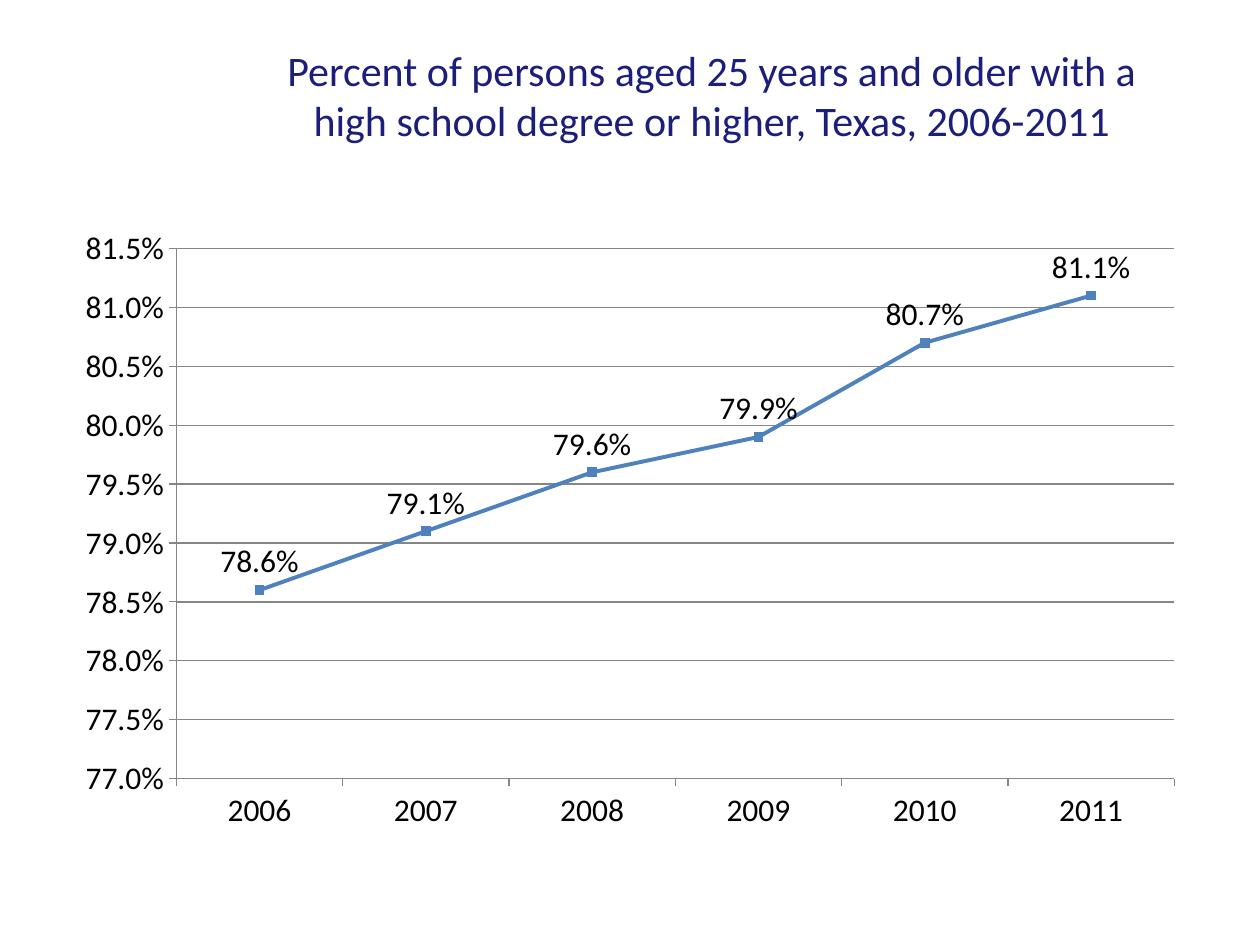
from pptx import Presentation
from pptx.chart.data import CategoryChartData
from pptx.dml.color import RGBColor
from pptx.enum.chart import XL_CHART_TYPE, XL_LABEL_POSITION, XL_MARKER_STYLE, XL_TICK_MARK
from pptx.enum.text import MSO_ANCHOR, MSO_AUTO_SIZE, PP_ALIGN
from pptx.oxml import parse_xml
from pptx.oxml.ns import nsdecls
from pptx.util import Inches, Pt

WIDTH, HEIGHT = Inches(10), Inches(7.5)
TITLE = ("Percent of persons aged 25 years and older with a high school "
         "degree or higher, Texas, 2006-2011")
TITLE_BOX = (0.19, 0.03, 0.75, 0.14)
CHART_BOX = (0.05, 0.23, 0.9, 0.66)
PLOT_SHARES = {"x": 0.1, "y": 0.05, "w": 0.88, "h": 0.85}
RATES = {"2006": 0.786, "2007": 0.791, "2008": 0.796,
         "2009": 0.799, "2010": 0.807, "2011": 0.811}


def color(value):
    return RGBColor.from_string(value)


def apply(target, formats):
    for name, value in formats.items():
        setattr(target, name, value)


def place(box):
    return [int(share * side) for share, side in zip(box, (WIDTH, HEIGHT) * 2)]


def set_font(font, size, shade):
    apply(font, {"name": "Calibri", "size": Pt(size), "bold": False})
    font.color.rgb = color(shade)


def set_line(line, width, shade):
    line.width = Pt(width)
    line.color.rgb = color(shade)


def add_title(page, box):
    title = page.shapes.title
    apply(title, dict(zip(("left", "top", "width", "height"), place(box))))
    frame = title.text_frame
    frame.text = TITLE
    apply(frame, {"word_wrap": True, "auto_size": MSO_AUTO_SIZE.NONE,
                  "vertical_anchor": MSO_ANCHOR.MIDDLE})
    para = frame.paragraphs[0]
    para.alignment = PP_ALIGN.CENTER
    set_font(para.runs[0].font, 24, "1B1E7A")


def fix_plot(chart):
    sides = "".join(f'<c:{side}Mode val="edge"/>' for side in "xy")
    shares = "".join(f'<c:{key} val="{share}"/>' for key, share in PLOT_SHARES.items())
    layout = parse_xml(
        f'<c:layout {nsdecls("c")}><c:manualLayout><c:layoutTarget val="inner"/>'
        f"{sides}{shares}</c:manualLayout></c:layout>")
    plot_area = chart._chartSpace.chart.plotArea
    for old in plot_area.findall(layout.tag):
        plot_area.remove(old)
    plot_area.insert(0, layout)


def format_axes(chart):
    for axis in (chart.category_axis, chart.value_axis):
        apply(axis, {"major_tick_mark": XL_TICK_MARK.OUTSIDE,
                     "minor_tick_mark": XL_TICK_MARK.NONE})
        set_line(axis.format.line, 0.75, "868686")
    chart.category_axis.has_major_gridlines = False
    values = chart.value_axis
    apply(values, {"minimum_scale": 0.77, "maximum_scale": 0.815,
                   "major_unit": 0.005, "has_major_gridlines": True})
    set_line(values.major_gridlines.format.line, 0.75, "868686")
    apply(values.tick_labels, {"number_format": "0.0%", "number_format_is_linked": False})


def format_series(series):
    series.smooth = False
    set_line(series.format.line, 2.25, "4F81BD")
    marker = series.marker
    apply(marker, {"style": XL_MARKER_STYLE.SQUARE, "size": 5})
    marker.format.fill.solid()
    marker.format.fill.fore_color.rgb = color("4F81BD")
    set_line(marker.format.line, 0.75, "4F81BD")
    labels = series.data_labels
    apply(labels, {"show_value": True, "position": XL_LABEL_POSITION.ABOVE,
                   "number_format": "0.0%", "number_format_is_linked": False})
    set_font(labels.font, 18, "000000")


def add_rate_chart(page, box):
    data = CategoryChartData(number_format="0.0%")
    data.categories = list(RATES)
    data.add_series("Series 1", list(RATES.values()))
    chart = page.shapes.add_chart(XL_CHART_TYPE.LINE_MARKERS, *place(box), data).chart
    apply(chart, {"has_legend": False, "has_title": False})
    set_font(chart.font, 18, "000000")
    chart.plots[0].vary_by_categories = False
    fix_plot(chart)
    format_axes(chart)
    format_series(chart.plots[0].series[0])


def main():
    deck = Presentation()
    apply(deck, {"slide_width": WIDTH, "slide_height": HEIGHT})
    page = deck.slides.add_slide(deck.slide_layouts.get_by_name("Title Only"))
    add_rate_chart(page, CHART_BOX)
    add_title(page, TITLE_BOX)
    deck.save("out.pptx")


if __name__ == "__main__":
    main()
